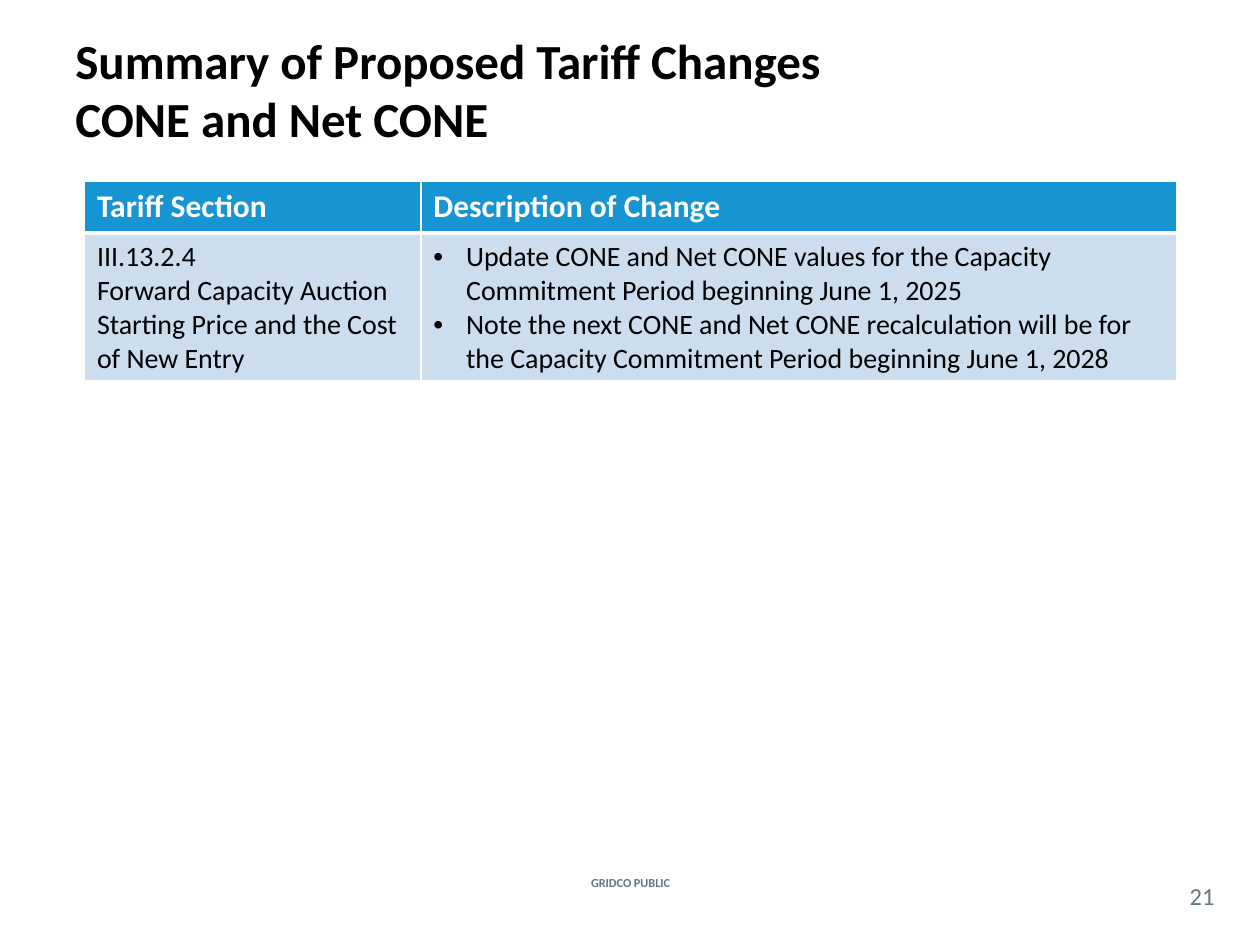
from lxml import etree
from pptx import Presentation
from pptx.dml.color import RGBColor
from pptx.enum.text import MSO_ANCHOR, PP_ALIGN
from pptx.oxml.ns import qn
from pptx.util import Inches, Pt

LEFT, CENTER = PP_ALIGN.LEFT, PP_ALIGN.CENTER
MIDDLE = MSO_ANCHOR.MIDDLE

BLACK, WHITE, GREY = "000000", "FFFFFF", "62777F"
HEADER_BLUE, BODY_BLUE = "1795D2", "CCDDEE"


def rgb(value):
    return RGBColor.from_string(value)


class SlideBuilder:
    font_name = "Calibri"
    bullet_indent = Inches(0.26)

    def __init__(self, slide):
        self.slide = slide

    def add_runs(self, paragraph, text, size, color, bold=False):
        """Add the text as runs, one for each line."""
        for index, line in enumerate(text.split("\n")):
            if index:
                paragraph.add_line_break()
            run = paragraph.add_run()
            run.text = line
            run.font.name = self.font_name
            run.font.size = Pt(size)
            run.font.bold = bold
            run.font.color.rgb = rgb(color)

    def text(self, box, text, size, color, bold=False, align=LEFT, inset=None):
        shape = self.slide.shapes.add_textbox(*map(Inches, box))
        frame = shape.text_frame
        frame.word_wrap = True
        frame.vertical_anchor = MIDDLE
        if inset is not None:
            frame.margin_left = frame.margin_right = Inches(inset)
            frame.margin_top = frame.margin_bottom = Inches(inset)
        paragraph = frame.paragraphs[0]
        paragraph.alignment = align
        self.add_runs(paragraph, text, size, color, bold)

    def bullet(self, paragraph):
        properties = paragraph._p.get_or_add_pPr()
        properties.set("marL", str(self.bullet_indent))
        properties.set("indent", str(-self.bullet_indent))
        etree.SubElement(properties, qn("a:buFont"), typeface="Arial")
        etree.SubElement(properties, qn("a:buChar"), char="•")

    def borders(self, cell, top, bottom):
        """Draw white cell borders; top and bottom widths are in points."""
        properties = cell._tc.get_or_add_tcPr()
        for side, width in (("L", 1), ("R", 1), ("T", top), ("B", bottom)):
            line = etree.SubElement(properties, qn(f"a:ln{side}"), w=str(Pt(width)))
            fill = etree.SubElement(line, qn("a:solidFill"))
            etree.SubElement(fill, qn("a:srgbClr"), val=WHITE)

    def cell(self, cell, lines, size, color, fill, bold=False, bulleted=False,
             top=1, bottom=1):
        self.borders(cell, top, bottom)
        cell.fill.solid()
        cell.fill.fore_color.rgb = rgb(fill)
        frame = cell.text_frame
        for index, line in enumerate(lines):
            paragraph = frame.add_paragraph() if index else frame.paragraphs[0]
            if bulleted:
                self.bullet(paragraph)
            self.add_runs(paragraph, line, size, color, bold)

    def table(self, box, widths, heights, headers, body):
        shape = self.slide.shapes.add_table(
            len(heights), len(widths), *map(Inches, box))
        table = shape.table
        for column, width in zip(table.columns, widths):
            column.width = Inches(width)
        for row, height in zip(table.rows, heights):
            row.height = Inches(height)
        for index, (header, (lines, bulleted)) in enumerate(zip(headers, body)):
            self.cell(table.cell(0, index), [header], 18, WHITE, HEADER_BLUE,
                      bold=True, bottom=3)
            self.cell(table.cell(1, index), lines, 16, BLACK, BODY_BLUE,
                      bulleted=bulleted, top=3)


def main():
    presentation = Presentation()
    presentation.slide_width = Inches(10)
    presentation.slide_height = Inches(7.5)
    builder = SlideBuilder(
        presentation.slides.add_slide(presentation.slide_layouts[6]))

    builder.text((4.27, 6.92, 1.47, 0.17), "GRIDCO PUBLIC", 7, GREY,
                 bold=True, align=CENTER)
    builder.text((9.33, 6.96, 0.42, 0.29), "21", 14, GREY,
                 align=CENTER, inset=0)
    builder.text((0.5, 0.08, 9, 1.25),
                 "Summary of Proposed Tariff Changes\nCONE and Net CONE",
                 28, BLACK, bold=True)

    section = [
        "III.13.2.4",
        "Forward Capacity Auction Starting Price and the Cost of New Entry",
    ]
    changes = [
        "Update CONE and Net CONE values for the Capacity Commitment Period "
        "beginning June 1, 2025",
        "Note the next CONE and Net CONE recalculation will be for the "
        "Capacity Commitment Period beginning June 1, 2028",
    ]
    builder.table((0.67, 1.44, 8.67, 1.58), (2.67, 6), (0.41, 1.17),
                  ("Tariff Section", "Description of Change"),
                  ((section, False), (changes, True)))

    presentation.save("out.pptx")


if __name__ == "__main__":
    main()
